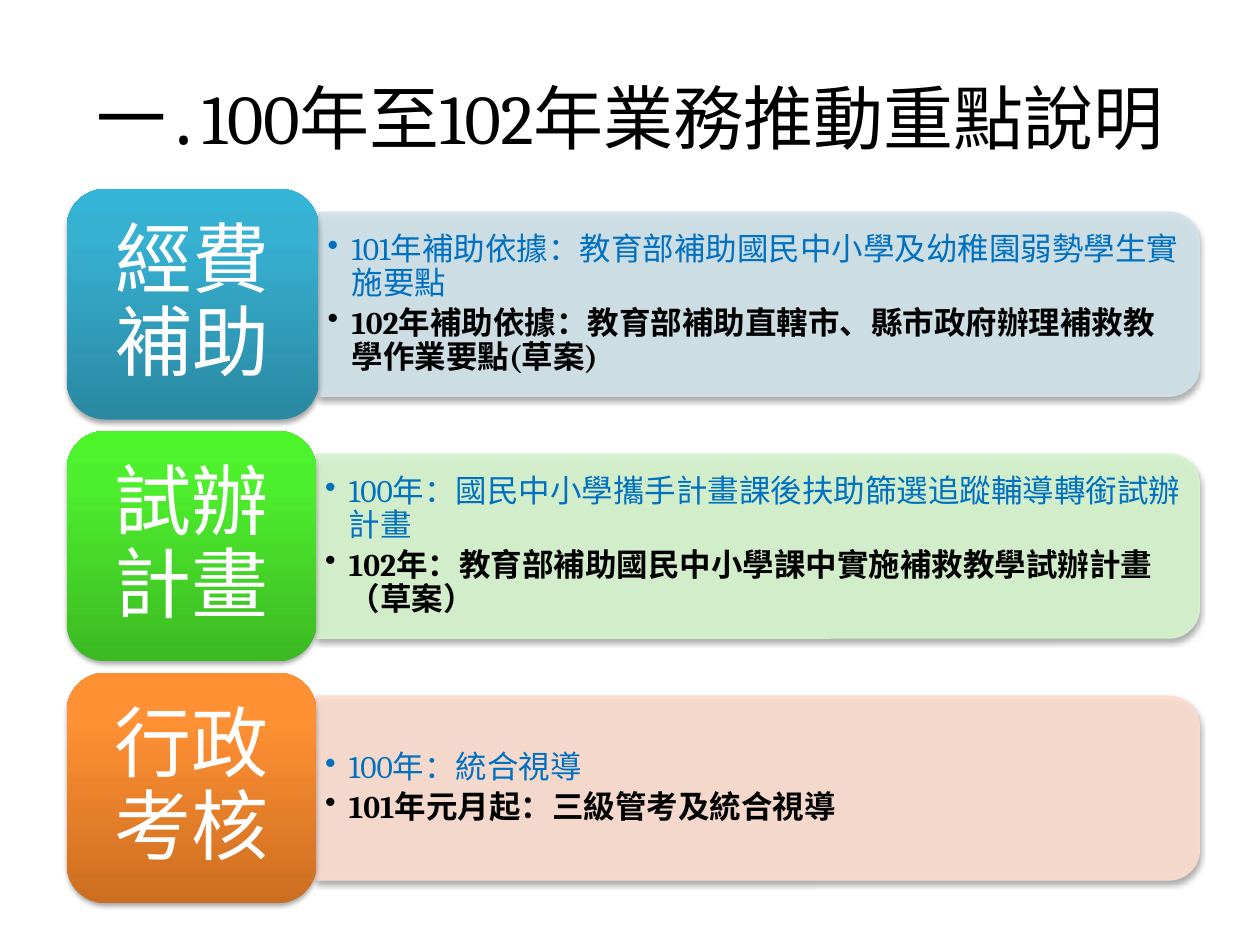
from dataclasses import dataclass

from lxml.etree import SubElement
from pptx import Presentation
from pptx.dml.color import RGBColor
from pptx.enum.shapes import MSO_SHAPE as Preset
from pptx.enum.text import MSO_ANCHOR as Anchor, PP_ALIGN as Align
from pptx.oxml import parse_xml
from pptx.oxml.ns import nsdecls, qn
from pptx.util import Inches, Pt


@dataclass(frozen=True)
class Theme:
    font: str = "Cambria"
    dot_font: str = "DejaVu Sans Mono"
    title_size: int = 40
    tag_size: int = 44
    body_size: int = 18
    black: str = "000000"
    white: str = "FFFFFF"
    blue: str = "0070C0"
    bar_opacity: int = 90
    shadow_opacity: int = 35


THEME = Theme()

TITLE = (("一", THEME.font), ("․", THEME.dot_font),
         ("100年至102年業務推動重點說明", THEME.font))

# tag, tag width, gradient from bottom to top, bar colour, earlier item, later item
ROWS = (
    ("經費補助", 2.0, ("2A88A2", "37B1D2", "34B4D6"), "D0E3EA",
     "101年補助依據：教育部補助國民中小學及幼稚園弱勢學生實施要點",
     "102年補助依據：教育部補助直轄市、縣市政府辦理補救教學作業要點(草案)"),
    ("試辦計畫", 1.98, ("3CB923", "4EF02E", "4CF52A"), "D6F4CE",
     "100年：國民中小學攜手計畫課後扶助篩選追蹤輔導轉銜試辦計畫",
     "102年：教育部補助國民中小學課中實施補救教學試辦計畫（草案）"),
    ("行政考核", 1.98, ("CC6E20", "FF9034", "FF9136"), "FCDDCF",
     "100年：統合視導",
     "101年元月起：三級管考及統合視導"),
)

LEFT, RIGHT, TOP = 0.53, 9.52, 1.5
ROW_PITCH = 1.92
TAG_HEIGHT, BAR_HEIGHT = 1.83, 1.46
TAG_PAD, BAR_PAD = 0.09, 0.07


def set_attributes(target, values):
    for name, value in values.items():
        setattr(target, name, value)


def set_opacity(color_format_owner, percent):
    for color in color_format_owner.iter(qn("a:srgbClr")):
        SubElement(color, qn("a:alpha")).set("val", str(percent * 1000))


def add_shadow(shape):
    effects = parse_xml(
        f'<a:effectLst {nsdecls("a")}><a:outerShdw blurRad="{Pt(3.1)}" dist="{Pt(1.8)}" '
        f'dir="5400000" rotWithShape="0"><a:srgbClr val="{THEME.black}">'
        f'<a:alpha val="{THEME.shadow_opacity * 1000}"/></a:srgbClr>'
        '</a:outerShdw></a:effectLst>')
    shape.shadow.inherit = False
    properties = shape._element.spPr
    properties.replace(properties.find(qn("a:effectLst")), effects)


def add_text_box(slide, left, top, width, height, inset_x=0.1, inset_y=0.05):
    frame = slide.shapes.add_textbox(
        Inches(left), Inches(top), Inches(width), Inches(height)).text_frame
    set_attributes(frame, {
        "word_wrap": True, "vertical_anchor": Anchor.MIDDLE,
        "margin_left": Inches(inset_x), "margin_right": Inches(inset_x),
        "margin_top": Inches(inset_y), "margin_bottom": Inches(inset_y)})
    return frame


def add_run(paragraph, text, size, color, font=THEME.font, bold=False):
    run = paragraph.add_run()
    run.text = text
    set_attributes(run.font, {"name": font, "size": Pt(size), "bold": bold})
    run.font.color.rgb = RGBColor.from_string(color)


def add_bullet(paragraph):
    properties = paragraph._p.get_or_add_pPr()
    properties.set("marL", str(Inches(0.19)))
    properties.set("indent", str(-Inches(0.19)))
    SubElement(properties, qn("a:buChar")).set("char", "•")


def add_title(slide):
    paragraph = add_text_box(slide, 0.5, 0.3, 9, 1.25).paragraphs[0]
    paragraph.alignment = Align.CENTER
    for text, font in TITLE:
        add_run(paragraph, text, THEME.title_size, THEME.black, font)


def add_bar(slide, left, middle, color):
    """Add a bar whose rounded top is turned to face right."""
    length = RIGHT - left
    bar = slide.shapes.add_shape(
        Preset.ROUND_2_SAME_RECTANGLE,
        Inches(left + (length - BAR_HEIGHT) / 2), Inches(middle - length / 2),
        Inches(BAR_HEIGHT), Inches(length))
    bar.rotation = 90
    bar.fill.solid()
    for paint in (bar.fill.fore_color, bar.line.color):
        paint.rgb = RGBColor.from_string(color)
    bar.line.width = Pt(0.75)
    set_opacity(bar._element.spPr, THEME.bar_opacity)
    add_shadow(bar)


def add_items(slide, left, middle, earlier, later):
    height = BAR_HEIGHT - 2 * BAR_PAD
    frame = add_text_box(slide, left, middle - height / 2,
                         RIGHT - BAR_PAD - left, height, 0.07, 0.04)
    styles = ((earlier, THEME.blue, False), (later, THEME.black, True))
    for index, (text, color, bold) in enumerate(styles):
        paragraph = frame.add_paragraph() if index else frame.paragraphs[0]
        set_attributes(paragraph, {"level": 1, "line_spacing": 0.9, "space_after": Pt(3)})
        add_bullet(paragraph)
        add_run(paragraph, text, THEME.body_size, color, bold=bold)


def add_tag(slide, top, width, text, gradient):
    tag = slide.shapes.add_shape(
        Preset.ROUNDED_RECTANGLE, Inches(LEFT), Inches(top), Inches(width), Inches(TAG_HEIGHT))
    tag.line.fill.background()
    stops = "".join(f'<a:gs pos="{position * 1000}"><a:srgbClr val="{color}"/></a:gs>'
                    for position, color in zip((0, 80, 100), gradient))
    tag._element.spPr.find(qn("a:prstGeom")).addnext(parse_xml(
        f'<a:gradFill {nsdecls("a")} rotWithShape="1"><a:gsLst>{stops}</a:gsLst>'
        '<a:lin ang="16200000" scaled="0"/></a:gradFill>'))
    add_shadow(tag)

    frame = add_text_box(slide, LEFT + TAG_PAD, top + TAG_PAD, width - 2 * TAG_PAD,
                         TAG_HEIGHT - 2 * TAG_PAD, 0.18, 0.09)
    paragraph = frame.paragraphs[0]
    set_attributes(paragraph, {"alignment": Align.CENTER, "line_spacing": 0.9})
    add_run(paragraph, text, THEME.tag_size, THEME.white)


def main():
    presentation = Presentation()
    set_attributes(presentation, {"slide_width": Inches(10), "slide_height": Inches(7.5)})
    slide = presentation.slides.add_slide(presentation.slide_layouts[6])
    add_title(slide)
    for index, (tag, width, gradient, bar_color, earlier, later) in enumerate(ROWS):
        top = TOP + index * ROW_PITCH
        middle = top + TAG_HEIGHT / 2
        add_bar(slide, LEFT + width, middle, bar_color)
        add_items(slide, LEFT + width, middle, earlier, later)
        add_tag(slide, top, width, tag, gradient)
    presentation.save("out.pptx")


if __name__ == "__main__":
    main()
